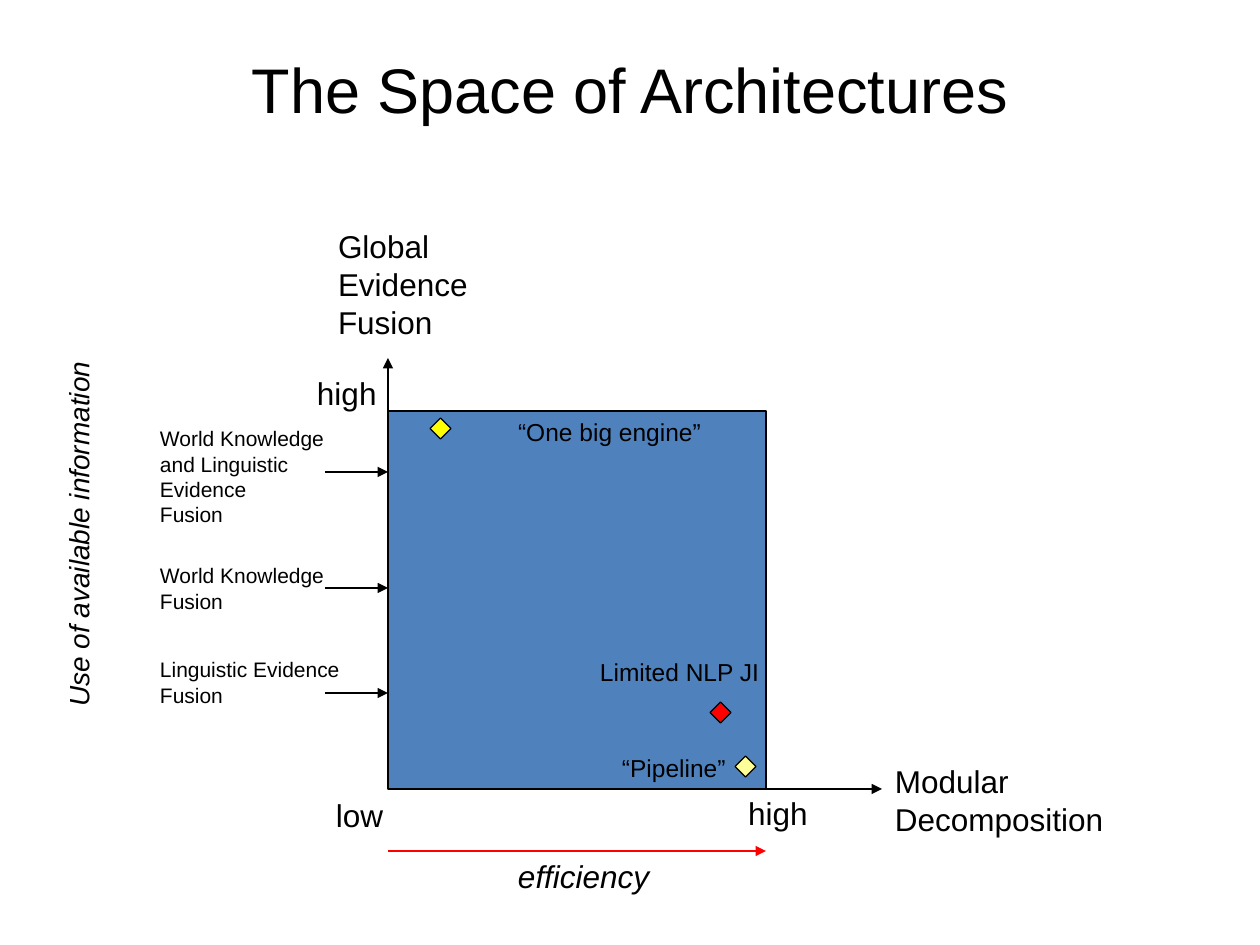
from lxml import etree
from pptx import Presentation
from pptx.dml.color import RGBColor
from pptx.enum.shapes import MSO_CONNECTOR, MSO_SHAPE
from pptx.enum.text import PP_ALIGN
from pptx.oxml.ns import qn
from pptx.util import Emu, Pt

RECT, GEM = MSO_SHAPE.RECTANGLE, MSO_SHAPE.DIAMOND
STRAIGHT = MSO_CONNECTOR.STRAIGHT
LEFT, CENTER = PP_ALIGN.LEFT, PP_ALIGN.CENTER

THEME = {
    "font": "Arial", "ink": "000000", "plane": "4F81BD", "red": "FF0000",
    "yellow": "FFFF00", "pale": "FFFF99",
    "title": 36, "axis": 18, "side": 16, "point": 14, "level": 12, "line": 0.75,
}

# Plane and axes, in px
X, Y, SIDE = 388, 411, 378
RIGHT, BASE = X + SIDE, Y + SIDE
GEM_W, LEAD = 21, 63
INSET_X, INSET_Y = 13, 6

# Labels: lines, type size, left, top, width, height
LABELS = [
    (["Modular Decomposition"], "axis", 882, 756, 252, 89),
    (["Global", "Evidence", "Fusion"], "axis", 325, 221, 170, 164),
    (["Limited NLP JI"], "point", 587, 651, 190, 42),
    (["Linguistic Evidence", "Fusion"], "level", 147, 651, 210, 63),
    (["World Knowledge Fusion"], "level", 147, 557, 233, 63),
    (["World Knowledge", "and Linguistic Evidence", "Fusion"],
     "level", 147, 420, 233, 113),
]
# Short labels on one line, with no right inset
MARKS = [
    (["low"], "axis", 323, 790, 73, 50),
    (["high"], "axis", 304, 368, 84, 50),
    (["high"], "axis", 735, 788, 84, 50),
    (["“Pipeline”"], "point", 609, 747, 128, 42),
]
GEMS = [("pale", 735, 756), ("yellow", 430, 418), ("red", 710, 702)]
LEVELS = [472, 588, 693]
ARROWS = [
    (X, BASE, X, 358, "ink"),
    (X, BASE, 882, BASE, "ink"),
    (X, 851, RIGHT, 851, "red"),
] + [(X - LEAD, y, X, y, "ink") for y in LEVELS]


def px(n):
    return Emu(round(n * 914400 / 126))


def tint(name):
    return RGBColor.from_string(THEME[name])


def text(slide, lines, size, x, y, w, h, align=LEFT, italic=False,
         left=INSET_X, right=INSET_X, top=INSET_Y):
    box = slide.shapes.add_textbox(px(x), px(y), px(w), px(h))
    frame = box.text_frame
    frame.word_wrap = True
    frame.margin_left, frame.margin_right = px(left), px(right)
    frame.margin_top = px(top)
    frame.text = "\n".join(lines)
    for para in frame.paragraphs:
        para.alignment = align
        font = para.font
        font.name, font.size = THEME["font"], Pt(THEME[size])
        font.italic = italic
        font.color.rgb = tint("ink")
    return box


def shape(slide, kind, fill, x, y, w):
    item = slide.shapes.add_shape(kind, px(x), px(y), px(w), px(w))
    item.shadow.inherit = False
    item.fill.solid()
    item.fill.fore_color.rgb = tint(fill)
    item.line.color.rgb = tint("ink")
    item.line.width = Pt(THEME["line"])


def arrow(slide, x1, y1, x2, y2, color):
    item = slide.shapes.add_connector(STRAIGHT, px(x1), px(y1), px(x2), px(y2))
    item.line.color.rgb = tint(color)
    item.line.width = Pt(THEME["line"])
    props = item._element.spPr
    etree.SubElement(props.find(qn("a:ln")), qn("a:tailEnd"), type="triangle")
    etree.SubElement(props, qn("a:effectLst"))


def main():
    deck = Presentation()
    deck.slide_width, deck.slide_height = px(1260), px(945)
    slide = deck.slides.add_slide(deck.slide_layouts[6])

    # Title
    text(slide, ["The Space of Architectures"], "title", 63, 38, 1134, 157,
         align=CENTER, top=12)

    # Plane, axes and arrows
    shape(slide, RECT, "plane", X, Y, SIDE)
    for ends in ARROWS:
        arrow(slide, *ends)

    # Points in the plane
    for fill, x, y in GEMS:
        shape(slide, GEM, fill, x, y, GEM_W)

    # Labels
    for label in LABELS:
        text(slide, *label)
    for mark in MARKS:
        text(slide, *mark, right=0)
    text(slide, ["“One big engine”"], "point", 451, 411, 273, 43, left=67)
    text(slide, ["efficiency"], "axis", 505, 851, 173, 50, italic=True)
    side = text(slide, ["Use of available information"], "side",
                -158, 485, 471, 50, italic=True, left=39, top=9)
    side.rotation = 270

    deck.save("out.pptx")


if __name__ == "__main__":
    main()
